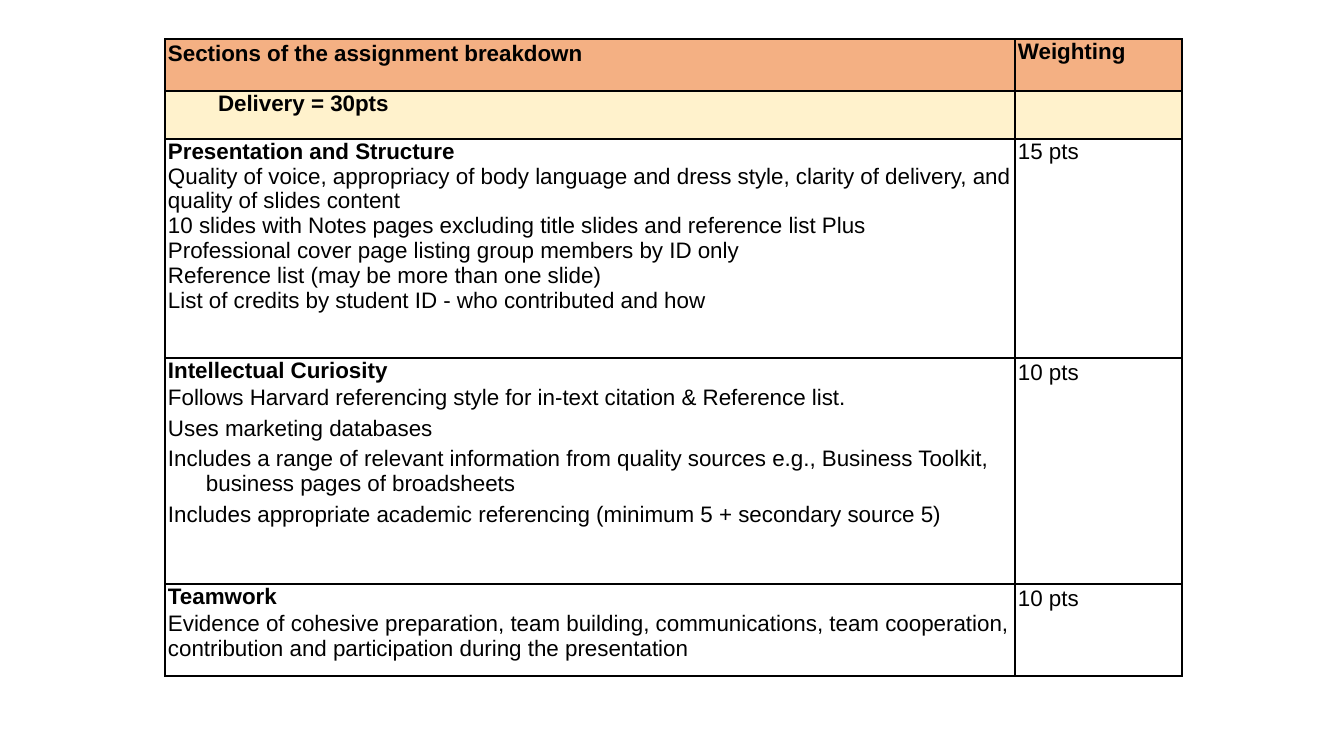
from lxml import etree
from pptx import Presentation
from pptx.dml.color import RGBColor
from pptx.oxml import parse_xml
from pptx.oxml.ns import nsdecls
from pptx.util import Pt

PX = 9071  # EMU per px, at 100.8 px to the inch


def color(hex_string):
    return RGBColor.from_string(hex_string)


def add_text(cell, text, first=False, bold=False, before=0, after=0, line=1.0, left=0, hang=0):
    frame = cell.text_frame
    paragraph = frame.paragraphs[0] if first else frame.add_paragraph()
    properties = paragraph._p.get_or_add_pPr()
    properties.set("marL", str((left + hang) * PX))
    properties.set("indent", str(-hang * PX))
    paragraph.space_before, paragraph.space_after = Pt(before), Pt(after)
    paragraph.line_spacing = line
    run = paragraph.add_run()
    run.text = text
    run.font.name, run.font.size, run.font.bold = "Arial", Pt(16), bold
    run.font.color.rgb = color("000000")


# Paragraph formats
heading = dict(bold=True)
plain = dict()
hanging = dict(hang=38)
spaced = dict(before=2, after=2)
spaced_hanging = dict(hang=38, before=2, after=2)
points = dict(line=1.1, after=4)

# Each row: height, fill, then the paragraphs of its two cells
rows = [
    (52, "F4B083",
     [("Sections of the assignment breakdown", dict(bold=True, line=1.1, after=4))],
     [("Weighting", dict(bold=True, after=4))]),
    (48, "FFF2CC",
     [("Delivery = 30pts", dict(bold=True, left=50, after=2))],
     []),
    (219, None,
     [("Presentation and Structure", heading),
      ("Quality of voice, appropriacy of body language and dress style, clarity of delivery, "
       "and quality of slides content", plain),
      ("10 slides with Notes pages excluding title slides and reference list Plus", hanging),
      ("Professional cover page listing group members by ID only", hanging),
      ("Reference list (may be more than one slide)", hanging),
      ("List of credits by student ID - who contributed and how", hanging)],
     [("15 pts", plain)]),
    (226, None,
     [("Intellectual Curiosity", heading),
      ("Follows Harvard referencing style for in-text citation & Reference list.", spaced),
      ("Uses marketing databases", spaced_hanging),
      ("Includes a range of relevant information from quality sources e.g., Business Toolkit, "
       "business pages of broadsheets", spaced_hanging),
      ("Includes appropriate academic referencing (minimum 5 + secondary source 5)",
       spaced_hanging)],
     [("10 pts", points)]),
    (92, None,
     [("Teamwork", heading),
      ("Evidence of cohesive preparation, team building, communications, team cooperation, "
       "contribution and participation during the presentation", spaced)],
     [("10 pts", points)]),
]
column_widths = [850, 167]

# Slide
presentation = Presentation()
presentation.slide_width, presentation.slide_height = 1344 * PX, 756 * PX
slide = presentation.slides.add_slide(presentation.slide_layouts[6])

# Table
table_height = sum(row[0] for row in rows)
shape = slide.shapes.add_table(len(rows), len(column_widths), 165 * PX, 39 * PX,
                               sum(column_widths) * PX, table_height * PX)
table = shape.table
table.first_row = table.horz_banding = False
for column, width in zip(table.columns, column_widths):
    column.width = width * PX

# Cells
for row_index, (height, fill, *cells) in enumerate(rows):
    table.rows[row_index].height = height * PX
    for column_index, paragraphs in enumerate(cells):
        cell = table.cell(row_index, column_index)
        cell.margin_left = cell.margin_right = 3 * PX
        cell.margin_top = cell.margin_bottom = 0
        if fill:
            cell.fill.solid()
            cell.fill.fore_color.rgb = color(fill)
        else:
            cell.fill.background()
        for index, (text, text_format) in enumerate(paragraphs):
            add_text(cell, text, first=index == 0, **text_format)

        # Borders come before the fill in the cell properties
        for index, side in enumerate(("lnL", "lnR", "lnT", "lnB")):
            border = parse_xml(f'<a:{side} {nsdecls("a")} w="{Pt(1)}"><a:solidFill>'
                               f'<a:srgbClr val="000000"/></a:solidFill></a:{side}>')
            cell._tc.get_or_add_tcPr().insert(index, border)

presentation.save("out.pptx")
